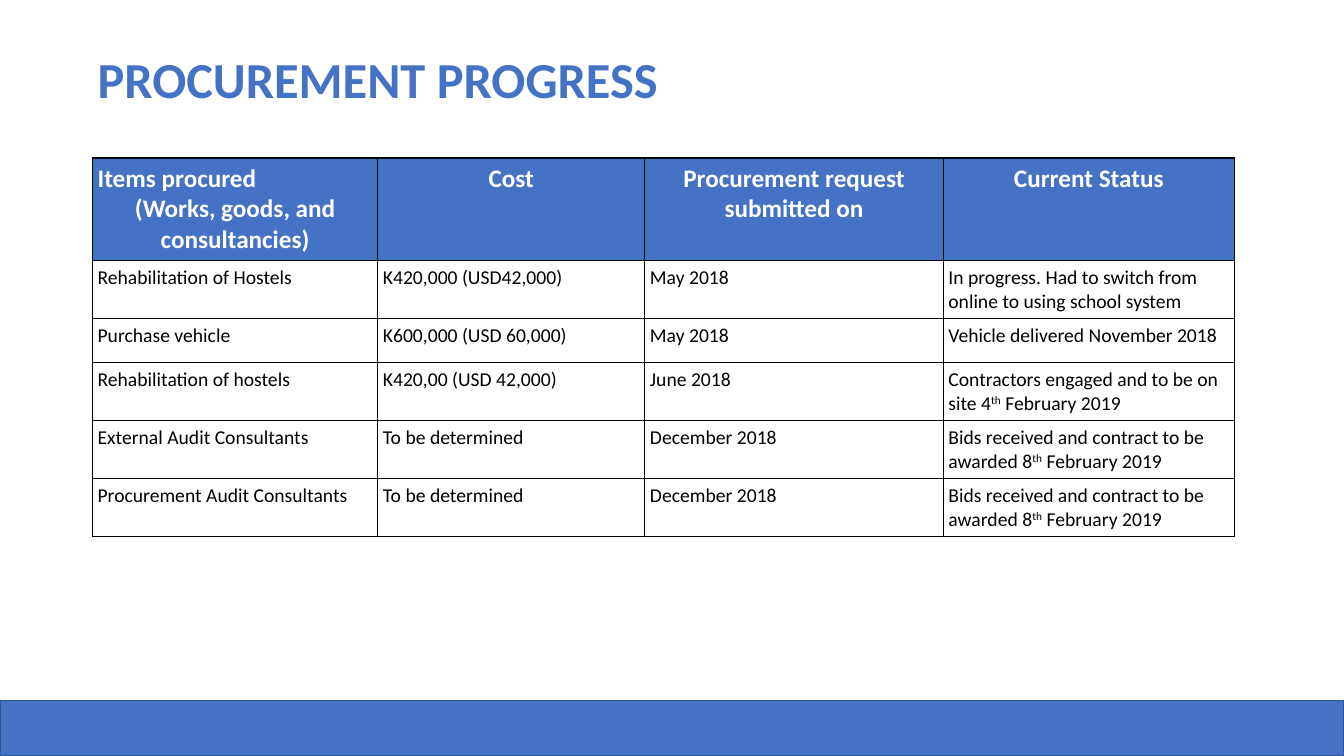
from lxml.etree import SubElement
from pptx import Presentation
from pptx.dml.color import RGBColor
from pptx.enum.shapes import MSO_SHAPE as Shape
from pptx.enum.text import MSO_ANCHOR as Anchor, PP_ALIGN as Align
from pptx.oxml.ns import qn
from pptx.util import Cm, Pt

TITLE = "PROCUREMENT PROGRESS"
HEADS = [
    "Items procured\n(Works, goods, and consultancies)",
    "Cost",
    "Procurement request submitted on",
    "Current Status",
]
# Text between carets is raised.
ROWS = [
    ("Rehabilitation of Hostels", "K420,000 (USD42,000)", "May 2018",
     "In progress. Had to switch from online to using school system"),
    ("Purchase vehicle", "K600,000 (USD 60,000)", "May 2018",
     "Vehicle delivered November 2018"),
    ("Rehabilitation of hostels", "K420,00 (USD 42,000)", "June 2018",
     "Contractors engaged and to be on site 4^th^ February 2019"),
    ("External Audit Consultants", "To be determined", "December 2018",
     "Bids received and contract to be awarded 8^th^ February 2019"),
    ("Procurement Audit Consultants", "To be determined", "December 2018",
     "Bids received and contract to be awarded 8^th^ February 2019"),
]
WIDTHS = [7.19, 6.73, 7.52, 7.34]
HEIGHTS = [2.59, 1.46, 1.11, 1.46, 1.46, 1.46]
WIDE, HIGH, BAND = 33.87, 19.05, 1.4
LEFT, INSET = 2.33, Cm(0.13)
BLUE, EDGE, BLACK, WHITE = "4472C4", "32538F", "000000", "FFFFFF"


def paint(fmt, color):
    """Give a fill a solid colour."""
    fmt.solid()
    fmt.fore_color.rgb = RGBColor.from_string(color)


def style(run, size, color, bold):
    font = run.font
    font.name, font.size, font.bold = "Calibri", Pt(size), bold
    paint(font.fill, color)


def write(para, text, size, color, bold=False):
    """Fill a paragraph, raising the parts between carets."""
    for i, part in enumerate(text.split("^")):
        run = para.add_run()
        run.text = part
        style(run, size, color, bold)
        if i % 2:
            run.font._element.set("baseline", "30000")


def inset(box):
    box.margin_left = box.margin_right = INSET
    box.margin_top = box.margin_bottom = INSET


def border(cell):
    props = cell._tc.get_or_add_tcPr()
    for side in ("lnL", "lnR", "lnT", "lnB"):
        line = SubElement(props, qn("a:" + side), w=str(Pt(1)))
        fill = SubElement(line, qn("a:solidFill"))
        SubElement(fill, qn("a:srgbClr"), val=BLACK)


def add_band(slide):
    band = slide.shapes.add_shape(
        Shape.RECTANGLE, 0, Cm(HIGH - BAND), Cm(WIDE), Cm(BAND))
    band.shadow.inherit = False
    paint(band.fill, BLUE)
    paint(band.line.fill, EDGE)
    band.line.width = Pt(1)


def add_title(slide):
    box = slide.shapes.add_textbox(Cm(LEFT), Cm(1.01), Cm(29.21), Cm(2.13))
    frame = box.text_frame
    frame.word_wrap = True
    frame.vertical_anchor = Anchor.MIDDLE
    inset(frame)
    para = frame.paragraphs[0]
    para.line_spacing = 0.9
    write(para, TITLE, 36, BLUE, True)


def fill_cell(cell, text, head):
    inset(cell)
    border(cell)
    if head:
        paint(cell.fill, BLUE)
    else:
        cell.fill.background()
    frame = cell.text_frame
    lines = text.split("\n")
    for i, line in enumerate(lines):
        para = frame.add_paragraph() if i else frame.paragraphs[0]
        last = i == len(lines) - 1
        para.alignment = Align.CENTER if head and last else Align.LEFT
        write(para, line, 18 if head else 14, WHITE if head else BLACK, head)


def add_grid(slide):
    data = [HEADS, *ROWS]
    table = slide.shapes.add_table(
        len(data), len(HEADS), Cm(LEFT), Cm(3.98),
        Cm(sum(WIDTHS)), Cm(sum(HEIGHTS))).table
    table.horz_banding = False
    for col, width in zip(table.columns, WIDTHS):
        col.width = Cm(width)
    for r, (row, height) in enumerate(zip(table.rows, HEIGHTS)):
        row.height = Cm(height)
        for cell, text in zip(row.cells, data[r]):
            fill_cell(cell, text, r == 0)


def main():
    deck = Presentation()
    deck.slide_width, deck.slide_height = Cm(WIDE), Cm(HIGH)
    slide = deck.slides.add_slide(deck.slide_layouts[6])
    add_band(slide)
    add_title(slide)
    add_grid(slide)
    deck.save("out.pptx")


if __name__ == "__main__":
    main()
